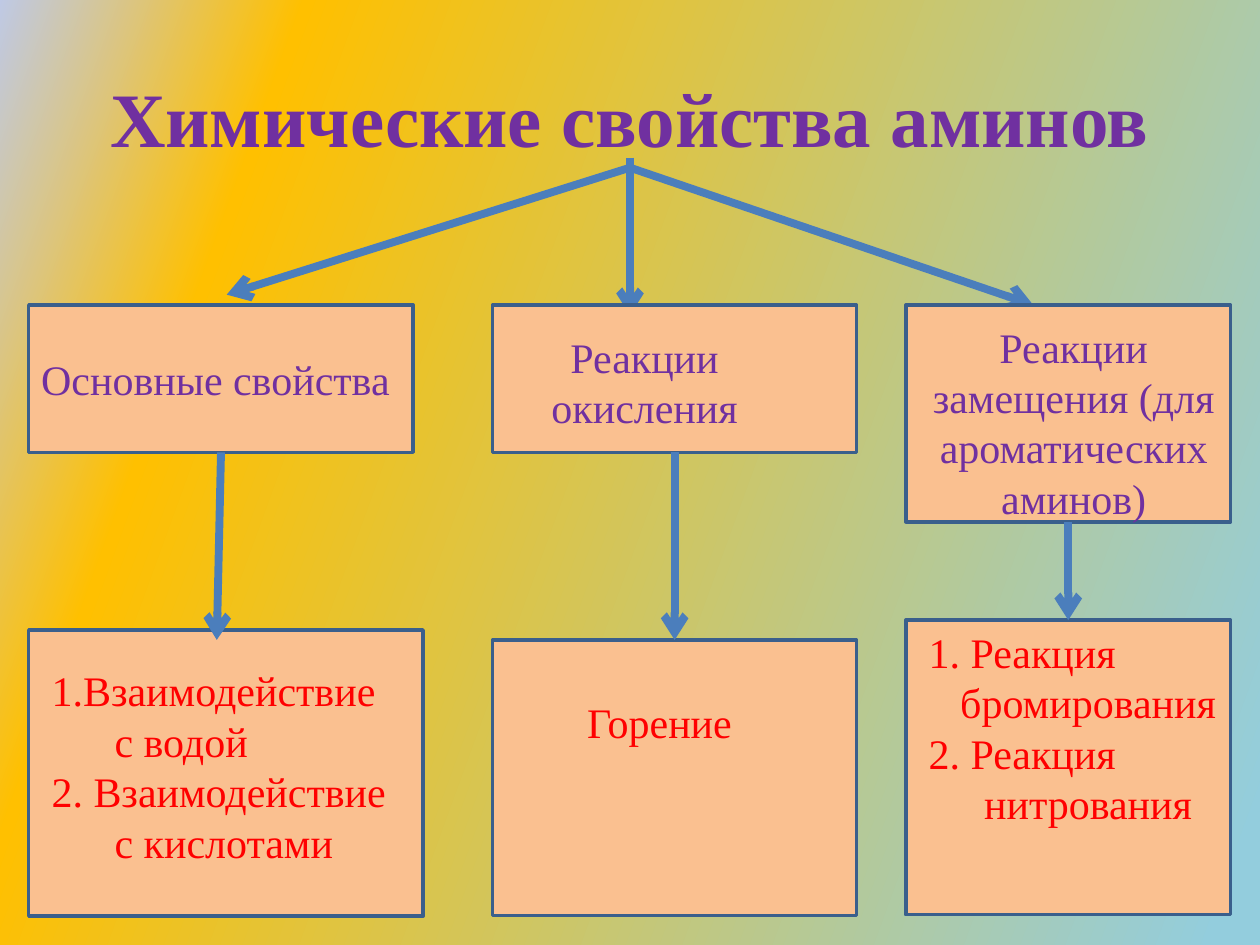
from copy import deepcopy
from dataclasses import dataclass
from typing import Optional

from pptx import Presentation
from pptx import util as u
from pptx.dml.color import RGBColor
from pptx.enum import shapes, text
from pptx.oxml import ns
from lxml import etree

FONT = "Times New Roman"
PURPLE, RED = "7030A0", "FF0000"
LEFT, MID = text.PP_ALIGN.LEFT, text.PP_ALIGN.CENTER


@dataclass
class Area:
    x: float
    y: float
    w: float
    h: float

    def cm(self) -> list:
        return [u.Cm(n) for n in (self.x, self.y, self.w, self.h)]


@dataclass
class Line:
    words: str
    align: text.PP_ALIGN = LEFT
    hang: float = 0


@dataclass
class Label:
    area: Area
    color: str
    lines: list[Line]


def rgb(code: str) -> RGBColor:
    return RGBColor.from_string(code)


def style(para, size: int, color: str, bold: Optional[bool] = None) -> None:
    font = para.font
    font.name, font.size, font.bold = FONT, u.Pt(size), bold
    font.color.rgb = rgb(color)


def write(frame, lines: list[Line], color: str) -> None:
    frame.word_wrap = True
    for i, line in enumerate(lines):
        para = frame.add_paragraph() if i else frame.paragraphs[0]
        para.text, para.alignment = line.words, line.align
        if line.hang:
            props = para._p.get_or_add_pPr()
            props.set("marL", str(u.Cm(line.hang)))
            props.set("indent", str(-u.Cm(line.hang)))
        style(para, 24, color)


def add_box(slide, area: Area):
    box = slide.shapes.add_shape(shapes.MSO_SHAPE.RECTANGLE, *area.cm())
    box.shadow.inherit = False
    box.fill.solid()
    box.fill.fore_color.rgb = rgb("FAC090")
    box.line.color.rgb = rgb("3A5F8C")
    box.line.width = u.Pt(2)
    return box


def add_label(slide, label: Label) -> None:
    frame = slide.shapes.add_textbox(*label.area.cm()).text_frame
    write(frame, label.lines, label.color)


def add_arrow(slide, x1: float, y1: float, x2: float, y2: float):
    ends = [u.Cm(n) for n in (x1, y1, x2, y2)]
    arrow = slide.shapes.add_connector(shapes.MSO_CONNECTOR.STRAIGHT, *ends)
    arrow.line.color.rgb = rgb("4B7EBC")
    arrow.line.width = u.Pt(4.5)
    etree.SubElement(arrow.line._get_or_add_ln(), ns.qn("a:tailEnd"), type="arrow")
    etree.SubElement(arrow._element.spPr, ns.qn("a:effectLst"))
    return arrow


def paint(slide) -> None:
    fill = slide.background.fill
    fill.gradient()
    grad = slide._element.find(".//" + ns.qn("a:gradFill"))
    stops = grad.find(ns.qn("a:gsLst"))
    stops.append(deepcopy(stops[-1]))
    hues = (0, "BFC9E5"), (0.19, "FFC000"), (0.97, "93CDDD")
    for stop, (place, color) in zip(fill.gradient_stops, hues):
        stop.position = place
        stop.color.rgb = rgb(color)
    fill.gradient_angle = 340


TOPS = [
    Area(0.58, 6.15, 7.75, 2.97),
    Area(9.93, 6.15, 7.34, 2.97),
    Area(18.26, 6.15, 6.55, 4.37),
]
LOWS = [
    Area(0.58, 12.7, 7.95, 5.77),
    Area(9.93, 12.9, 7.34, 5.56),
    Area(18.26, 12.5, 6.55, 5.94),
]
RAYS = [
    (12.7, 3.38, 4.57, 5.94),
    (12.7, 3.18, 12.7, 6.35),
    (12.7, 3.38, 20.83, 6.15),
]
LABELS = [
    Label(Area(9.53, 6.55, 6.93, 2.31), PURPLE, [Line("Реакции окисления", MID)]),
    Label(Area(18.47, 6.35, 6.35, 4.37), PURPLE,
          [Line("Реакции замещения (для ароматических аминов)", MID)]),
    Label(Area(0.79, 13.28, 7.54, 5.38), RED,
          [Line("1.Взаимодействие с водой", LEFT, 1.27),
           Line("2. Взаимодействие с кислотами", LEFT, 1.27)]),
    Label(Area(9.83, 13.92, 6.93, 1.28), RED, [Line("Горение", MID)]),
    Label(Area(18.47, 12.5, 6.93, 5.38), RED,
          [Line("1. Реакция", LEFT, 1.27), Line("бромирования", MID, 1.27),
           Line("2. Реакция", LEFT, 1.27), Line("нитрования", MID, 1.27)]),
]


def main() -> None:
    deck = Presentation()
    deck.slide_width, deck.slide_height = u.Cm(25.4), u.Cm(19.05)
    slide = deck.slides.add_slide(deck.slide_layouts[5])
    paint(slide)

    title = slide.shapes.title
    title.left, title.top, title.width, title.height = Area(1.27, 0.76, 22.86, 3.18).cm()
    title.text_frame.text = "Химические свойства аминов"
    title.text_frame.vertical_anchor = text.MSO_ANCHOR.MIDDLE
    head = title.text_frame.paragraphs[0]
    head.alignment = MID
    style(head, 44, PURPLE, True)

    for ray in RAYS:
        add_arrow(slide, *ray)
    tops = [add_box(slide, area) for area in TOPS]
    write(tops[0].text_frame, [Line("Основные свойства")], PURPLE)
    lows = [add_box(slide, area) for area in LOWS]

    for i, (top, low) in enumerate(zip(tops, lows)):
        arrow = add_arrow(slide, 4.46, 9.12, 4.37, 12.9)
        arrow.begin_connect(top, 2)
        if i:
            arrow.end_connect(low, 0)
    for label in LABELS:
        add_label(slide, label)
    deck.save("out.pptx")


if __name__ == "__main__":
    main()
